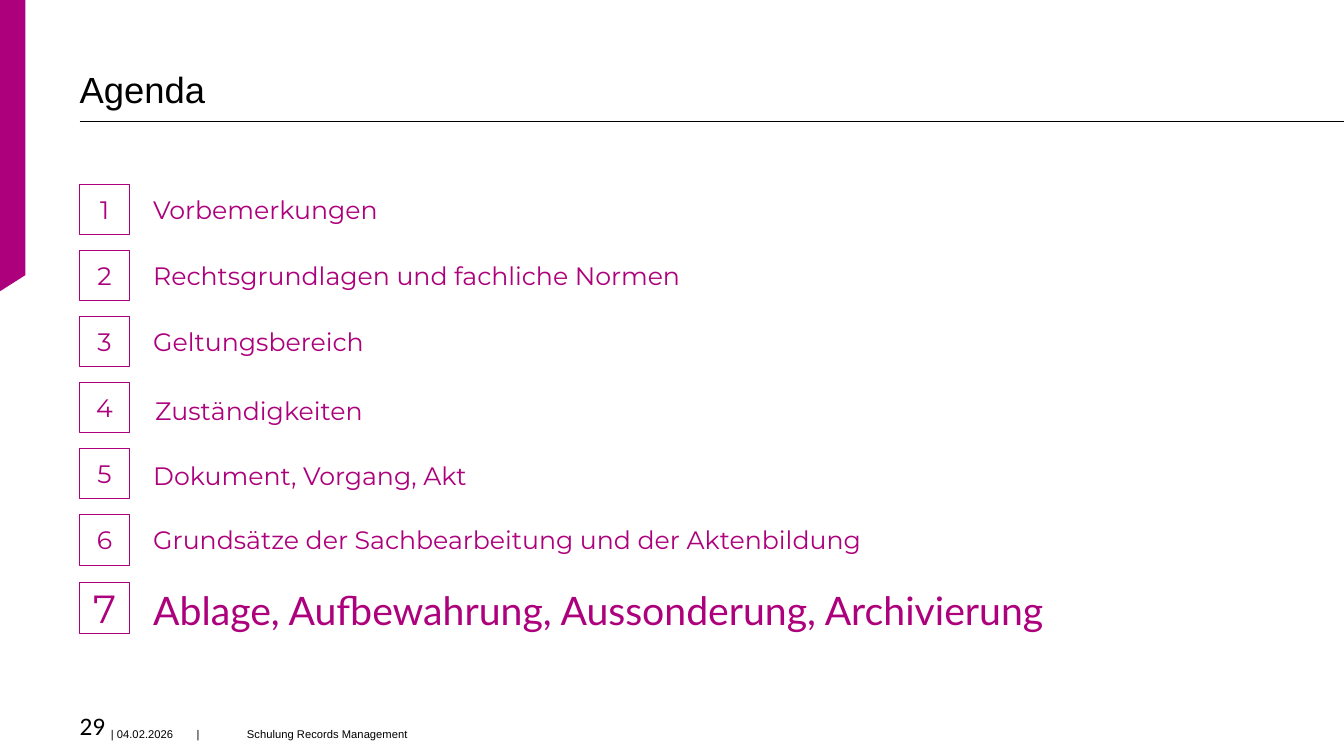
import copy
import dataclasses

import lxml.etree
import pptx
import pptx.dml.color
import pptx.enum.shapes
import pptx.enum.text
import pptx.oxml.ns
import pptx.util

MAGENTA = "AD007C"
BLACK = "000000"
SLIDE_WIDTH = pptx.util.Inches(13.33)
SLIDE_HEIGHT = pptx.util.Inches(7.5)

LEFT_MARGIN = 5.93
LABEL_LEFT = 11.4
LABEL_WIDTH = 82.73
NUMBER_WIDTH = 3.7
FIRST_ROW = 24.4
ROW_STEP = 8.73
ROW_HEIGHT = 6.67
FOOTER_TOP = 94.8
FOOTER_HEIGHT = 3.2


@dataclasses.dataclass(frozen=True)
class AgendaItem:
    label: str
    number_drop: float = 0
    label_drop: float = 0
    label_shift: float = 0
    label_font: str = "Montserrat"
    size: int = 18
    line_spacing: float = 1.0
    space_after: int = 0


@dataclasses.dataclass(frozen=True)
class FooterPart:
    text: str
    left: float
    width: float
    font: str = "Arial"
    size: int = 8


AGENDA = [
    AgendaItem("Vorbemerkungen"),
    AgendaItem("Rechtsgrundlagen und fachliche Normen"),
    AgendaItem("Geltungsbereich"),
    AgendaItem("Zuständigkeiten", label_drop=0.33, label_shift=0.15),
    AgendaItem("Dokument, Vorgang, Akt", label_drop=0.27),
    AgendaItem("Grundsätze der Sachbearbeitung und der Aktenbildung"),
    AgendaItem("Ablage, Aufbewahrung, Aussonderung, Archivierung",
               number_drop=0.27, label_drop=0.27, label_font="Lato",
               size=28, line_spacing=1.07, space_after=8),
]

FOOTER = [
    FooterPart("29", LEFT_MARGIN, 2.63, "Calibri", 18),
    FooterPart("| 04.02.2026", 8.25, 6.6),
    FooterPart("|\tSchulung Records Management", 14.63, 59.85),
]


def across(percent: float) -> int:
    return round(SLIDE_WIDTH * percent / 100)


def down(percent: float) -> int:
    return round(SLIDE_HEIGHT * percent / 100)


def color(value: str) -> pptx.dml.color.RGBColor:
    return pptx.dml.color.RGBColor.from_string(value)


def place(box, left: float, top: float, width: float, height: float) -> None:
    box.left, box.top = across(left), down(top)
    box.width, box.height = across(width), down(height)


def write(box, text: str, *, font: str, size: int, fill: str = BLACK,
          anchor=pptx.enum.text.MSO_ANCHOR.BOTTOM,
          align=pptx.enum.text.PP_ALIGN.LEFT,
          line_spacing: float = 1.0, space_after: int = 0) -> None:
    frame = box.text_frame
    frame.word_wrap = True
    frame.auto_size = pptx.enum.text.MSO_AUTO_SIZE.NONE
    frame.vertical_anchor = anchor
    frame.margin_left = frame.margin_right = 0
    frame.margin_top = frame.margin_bottom = 0
    para = frame.paragraphs[0]
    properties = para._p.get_or_add_pPr()
    properties.set("marL", "0")
    properties.set("indent", "0")
    lxml.etree.SubElement(properties, pptx.oxml.ns.qn("a:buNone"))
    if "\t" in text:
        stops = lxml.etree.SubElement(properties, pptx.oxml.ns.qn("a:tabLst"))
        stop = lxml.etree.SubElement(stops, pptx.oxml.ns.qn("a:tab"))
        stop.set("pos", str(pptx.util.Inches(0.15)))
        stop.set("algn", "l")
    para.alignment = align
    para.line_spacing = line_spacing
    para.space_before = pptx.util.Pt(0)
    para.space_after = pptx.util.Pt(space_after)
    span = para.add_run()
    span.text = text
    span.font.name = font
    span.font.size = pptx.util.Pt(size)
    span.font.color.rgb = color(fill)


def add_agenda_page(deck, body_count: int):
    layout = deck.slide_layouts[1]
    body = layout.placeholders[1].element
    for index in range(body_count):
        element = body if index == 0 else copy.deepcopy(body)
        element.xpath("./p:nvSpPr/p:cNvPr")[0].set("id", str(100 + index))
        slot = element.xpath("./p:nvSpPr/p:nvPr/p:ph")[0]
        slot.set("type", "body")
        slot.set("idx", str(20 + index))
        if index:
            layout.shapes._spTree.append(element)
    return deck.slides.add_slide(layout)


def draw_ribbon(page) -> None:
    outline = [(1.89, 0), (1.89, 36.4), (0, 38.53)]
    builder = page.shapes.build_freeform(0, 0)
    builder.add_line_segments([(across(x), down(y)) for x, y in outline])
    ribbon = builder.convert_to_shape()
    ribbon.shadow.inherit = False
    ribbon.fill.solid()
    ribbon.fill.fore_color.rgb = color(MAGENTA)
    ribbon.line.fill.background()


def draw_heading(page) -> None:
    title = page.shapes.title
    place(title, LEFT_MARGIN, 0, 88.22, 14.8)
    write(title, "Agenda", font="Arial", size=26, line_spacing=0.9)
    rule = page.shapes.add_connector(
        pptx.enum.shapes.MSO_CONNECTOR.STRAIGHT,
        across(LEFT_MARGIN), down(16.07), SLIDE_WIDTH, down(16.07))
    rule.line.color.rgb = color(BLACK)
    rule.line.width = pptx.util.Pt(0.5)
    lxml.etree.SubElement(rule.element.spPr, pptx.oxml.ns.qn("a:effectLst"))


def draw_item(item: AgendaItem, row: int, number_box, label_box) -> None:
    top = FIRST_ROW + row * ROW_STEP
    middle = pptx.enum.text.MSO_ANCHOR.MIDDLE
    place(number_box, LEFT_MARGIN, top + item.number_drop,
          NUMBER_WIDTH, ROW_HEIGHT)
    number_box.line.color.rgb = color(MAGENTA)
    number_box.line.width = pptx.util.Pt(0.5)
    write(number_box, str(row + 1), font="Montserrat", size=item.size,
          fill=MAGENTA, anchor=middle, align=pptx.enum.text.PP_ALIGN.CENTER)
    place(label_box, LABEL_LEFT + item.label_shift, top + item.label_drop,
          LABEL_WIDTH, ROW_HEIGHT)
    write(label_box, item.label, font=item.label_font, size=item.size,
          fill=MAGENTA, anchor=middle, line_spacing=item.line_spacing,
          space_after=item.space_after)


def draw_footer(page) -> None:
    for part in FOOTER:
        box = page.shapes.add_textbox(
            across(part.left), down(FOOTER_TOP),
            across(part.width), down(FOOTER_HEIGHT))
        write(box, part.text, font=part.font, size=part.size)


def main() -> None:
    deck = pptx.Presentation()
    deck.slide_width, deck.slide_height = SLIDE_WIDTH, SLIDE_HEIGHT
    page = add_agenda_page(deck, 2 * len(AGENDA))
    bodies = [box for box in page.placeholders
              if box.placeholder_format.idx >= 20]
    draw_ribbon(page)
    draw_heading(page)
    for row, item in enumerate(AGENDA):
        draw_item(item, row, bodies[2 * row], bodies[2 * row + 1])
    draw_footer(page)
    deck.save("out.pptx")


if __name__ == "__main__":
    main()
